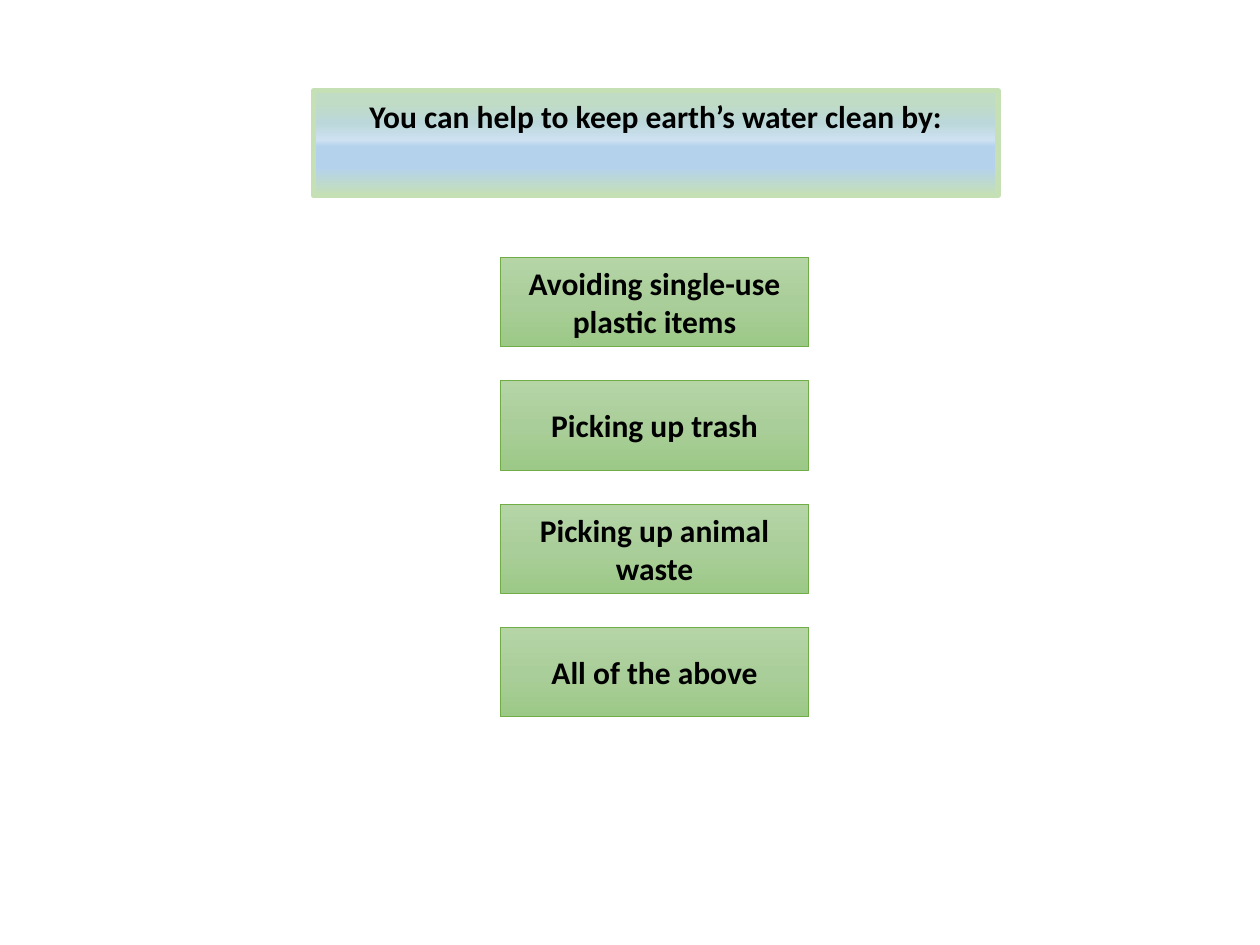
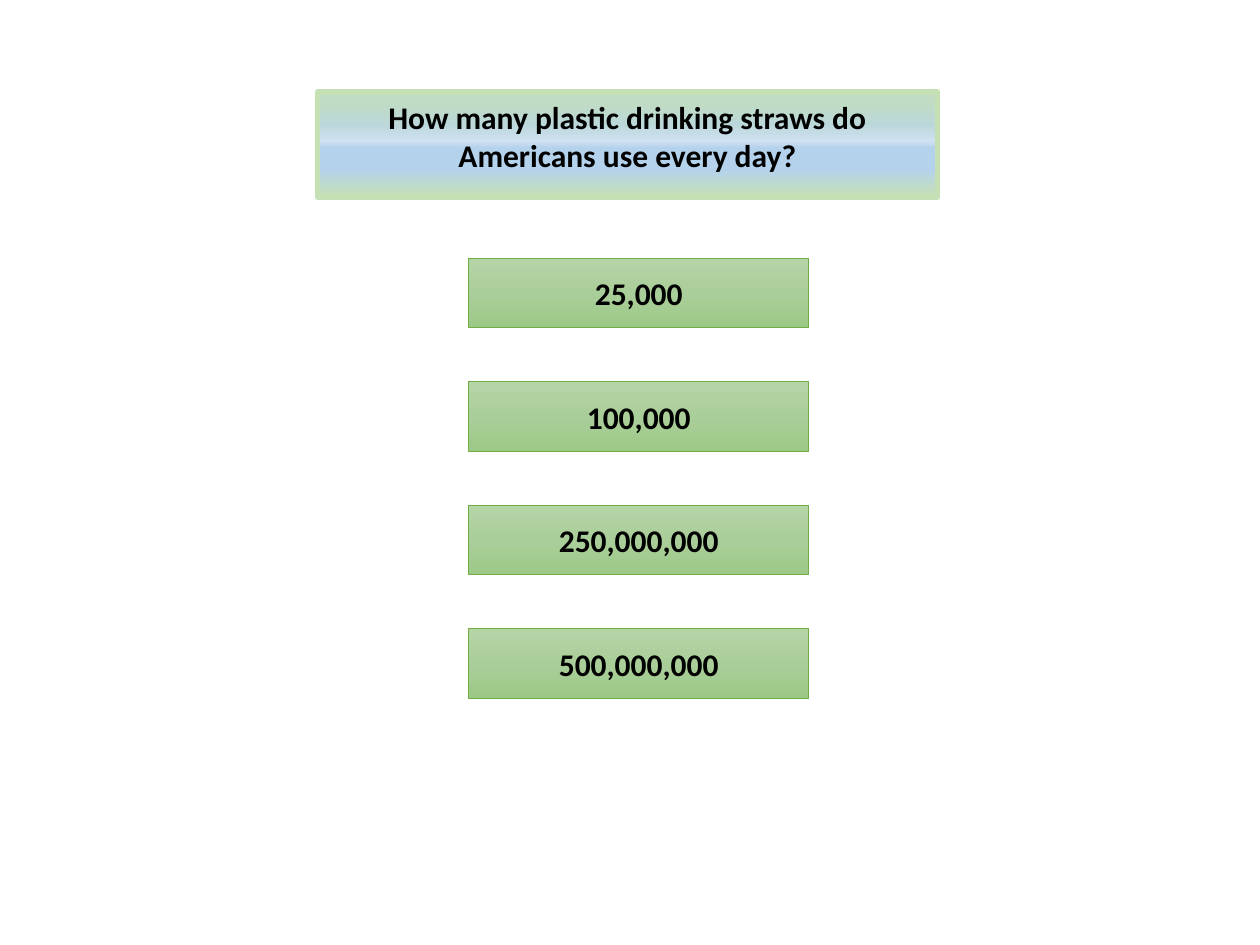
from dataclasses import dataclass

from lxml.etree import SubElement
from pptx import Presentation
from pptx.dml.color import RGBColor
from pptx.enum.shapes import MSO_SHAPE
from pptx.enum.text import MSO_ANCHOR, MSO_AUTO_SIZE, PP_ALIGN
from pptx.oxml.ns import qn
from pptx.util import Inches, Pt


@dataclass(frozen=True)
class Theme:
    font: str = "Calibri"
    size: float = 18
    text: str = "000000"
    question_line: str = "C5E0B4"
    question_width: float = 3
    question_stops: tuple = ((12, "C0DCC5"), (30, "BBD7D9"), (47, "CEE1F2"),
                             (53, "B5D2EC"), (74, "B5D2EC"), (100, "C5E0B4"))
    answer_line: str = "70AD47"
    answer_width: float = 0.5
    answer_stops: tuple = ((0, "B5D5A7"), (50, "AACE9A"), (100, "9CC987"))


theme = Theme()


def paint(shape, stops, line_color, line_width):
    shape.fill.gradient()
    shape.fill.gradient_angle = 270
    stop_list = next(shape._element.spPr.iter(qn("a:gsLst")))
    stop_list.clear()
    for position, color in stops:
        stop = SubElement(stop_list, qn("a:gs"), pos=str(position * 1000))
        SubElement(stop, qn("a:srgbClr"), val=color)
    shape.line.color.rgb = RGBColor.from_string(line_color)
    shape.line.width = Pt(line_width)


def write(shape, text, anchor):
    frame = shape.text_frame
    frame.text = text
    frame.word_wrap = True
    frame.vertical_anchor = anchor
    paragraph = frame.paragraphs[0]
    paragraph.alignment = PP_ALIGN.CENTER
    paragraph.font.name = theme.font
    paragraph.font.size = Pt(theme.size)
    paragraph.font.bold = True
    paragraph.font.color.rgb = RGBColor.from_string(theme.text)


quiz = [
    {
        "question": "You can help to keep earth’s water clean by:",
        "question_box": (2.49, 0.72, 5.43, 0.4),
        "answers": ["Avoiding single-use plastic items", "Picking up trash",
                    "Picking up animal waste", "All of the above"],
        "first_answer_box": (3.97, 2.04, 2.45, 0.71),
    },
    {
        "question": "How many plastic drinking straws do Americans use every day?",
        "question_box": (2.52, 0.73, 4.92, 0.71),
        "answers": ["25,000", "100,000", "250,000,000", "500,000,000"],
        "first_answer_box": (3.72, 2.05, 2.7, 0.55),
    },
]
row_pitch = 0.98

presentation = Presentation()
presentation.slide_width = Inches(10)
presentation.slide_height = Inches(7.5)
title_only = presentation.slide_layouts[5]

for page in quiz:
    slide = presentation.slides.add_slide(title_only)

    question = slide.shapes.title
    question.left, question.top, question.width, question.height = map(Inches, page["question_box"])
    paint(question, theme.question_stops, theme.question_line, theme.question_width)
    write(question, page["question"], MSO_ANCHOR.TOP)
    question.text_frame.auto_size = MSO_AUTO_SIZE.SHAPE_TO_FIT_TEXT

    left, top, width, height = page["first_answer_box"]
    for row, text in enumerate(page["answers"]):
        answer = slide.shapes.add_shape(
            MSO_SHAPE.ACTION_BUTTON_CUSTOM,
            Inches(left), Inches(top + row * row_pitch), Inches(width), Inches(height))
        answer.shadow.inherit = False
        paint(answer, theme.answer_stops, theme.answer_line, theme.answer_width)
        write(answer, text, MSO_ANCHOR.MIDDLE)

presentation.save("out.pptx")
